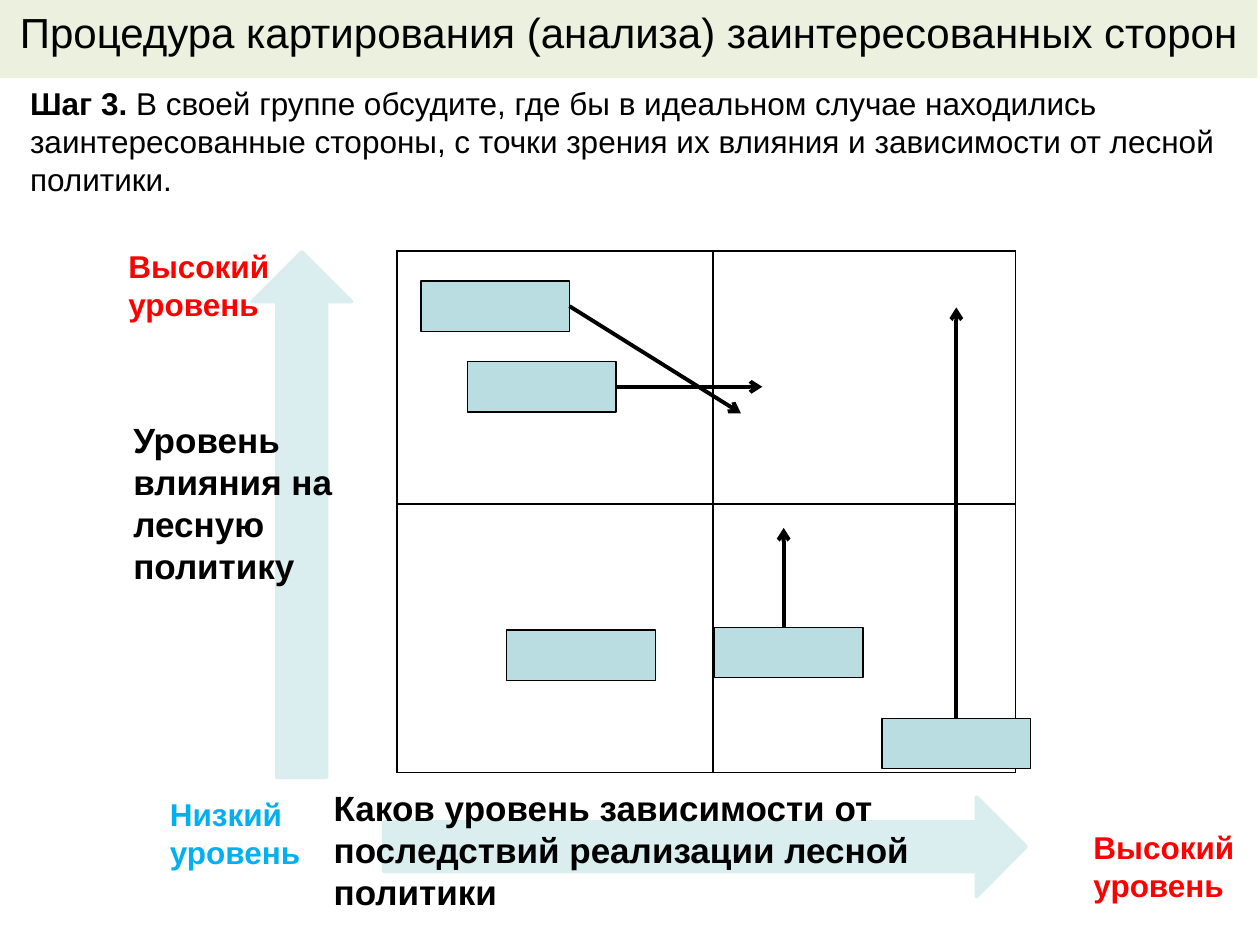
"""Build the stakeholder mapping slide with its influence and dependence grid."""
from typing import NamedTuple, Optional

from lxml.etree import SubElement
from pptx import Presentation
from pptx.dml.color import RGBColor
from pptx.enum.shapes import MSO_CONNECTOR as Connector, MSO_SHAPE as Shape
from pptx.enum.text import MSO_ANCHOR as Anchor, MSO_AUTO_SIZE as AutoSize, PP_ALIGN as Align
from pptx.oxml.ns import qn
from pptx.util import Emu, Pt

PX = 9144
FONT = "Arial"
BLACK = RGBColor(0x00, 0x00, 0x00)
WHITE = RGBColor(0xFF, 0xFF, 0xFF)
RED = RGBColor(0xFF, 0x00, 0x00)
SKY = RGBColor(0x00, 0xB0, 0xF0)
TEAL = RGBColor(0xBA, 0xDD, 0xE1)
PALE_TEAL = RGBColor(0xDA, 0xED, 0xEF)
PALE_GREEN = RGBColor(0xEB, 0xF1, 0xDE)
CARD_WIDTH, CARD_HEIGHT = 118, 40
RIGHT_SIDE, TOP_SIDE = 3, 0


class Box(NamedTuple):
    left: int
    top: int
    width: int
    height: int


class Label(NamedTuple):
    box: Box
    paragraphs: tuple[str, ...]
    size: int
    color: RGBColor


class Move(NamedTuple):
    start: tuple[int, int]
    end: tuple[int, int]
    card: Optional[int] = None
    side: int = TOP_SIDE


CARDS = [(334, 223), (371, 287), (567, 498), (402, 500), (700, 570)]
MOVES = [
    Move((452, 243), (588, 328), 0, RIGHT_SIDE),
    Move((489, 307), (605, 307), 1, RIGHT_SIDE),
    Move((622, 498), (622, 419)),
    Move((759, 570), (759, 244), 4, TOP_SIDE),
]
LEVELS = [
    Label(Box(125, 626, 130, 71), ("Низкий", "уровень"), 18, SKY),
    Label(Box(92, 191, 158, 71), ("Высокий уровень",), 18, RED),
    Label(Box(858, 652, 139, 71), ("Высокий уровень",), 18, RED),
]
INFLUENCE = Label(Box(96, 327, 197, 145), ("Уровень влияния на лесную политику",), 20, BLACK)
DEPENDENCE = Label(
    Box(255, 619, 603, 111),
    ("Каков уровень зависимости от последствий реализации лесной политики",), 20, BLACK)


def px(*lengths: int) -> list[Emu]:
    """Turn px lengths into EMU."""
    return [Emu(length * PX) for length in lengths]


def set_font(paragraph, size: int, color: RGBColor) -> None:
    """Format a whole paragraph."""
    paragraph.font.name = FONT
    paragraph.font.size = Pt(size)
    paragraph.font.color.rgb = color


def add_title(slide, text: str) -> None:
    """Lay the title across the top band."""
    title = slide.shapes.title
    title.left, title.top, title.width, title.height = px(0, 0, 998, 62)
    title.fill.solid()
    title.fill.fore_color.rgb = PALE_GREEN
    frame = title.text_frame
    frame.text = text
    frame.auto_size = AutoSize.NONE
    frame.vertical_anchor = Anchor.TOP
    frame.paragraphs[0].alignment = Align.CENTER
    set_font(frame.paragraphs[0], 24, BLACK)


def add_frame(slide, box: Box):
    """Add a wrapping text box and return its frame."""
    frame = slide.shapes.add_textbox(*px(*box)).text_frame
    frame.word_wrap = True
    frame.auto_size = AutoSize.SHAPE_TO_FIT_TEXT
    return frame


def add_label(slide, label: Label) -> None:
    """Add a bold label."""
    frame = add_frame(slide, label.box)
    frame.text = "\n".join(label.paragraphs)
    for paragraph in frame.paragraphs:
        set_font(paragraph, label.size, label.color)
        paragraph.font.bold = True


def add_step(slide, heading: str, task: str) -> None:
    """Add the task of this step after its bold heading."""
    paragraph = add_frame(slide, Box(14, 62, 969, 101)).paragraphs[0]
    for text, bold in ((heading, True), (task, False)):
        run = paragraph.add_run()
        run.text = text
        run.font.bold = bold
    set_font(paragraph, 18, BLACK)


def add_grid(slide, box: Box, columns: tuple[int, ...], rows: tuple[int, ...]) -> None:
    """Add the empty grid with thin black borders."""
    grid = slide.shapes.add_table(len(rows), len(columns), *px(*box)).table
    grid.first_row = grid.horz_banding = False
    for column, width in zip(grid.columns, px(*columns)):
        column.width = width
    for row, height in zip(grid.rows, px(*rows)):
        row.height = height
    for cell in grid.iter_cells():
        properties = cell._tc.get_or_add_tcPr()
        for edge in ("a:lnL", "a:lnR", "a:lnT", "a:lnB"):
            border = SubElement(properties, qn(edge), w=str(Pt(1)))
            SubElement(SubElement(border, qn("a:solidFill")), qn("a:srgbClr"), val=str(BLACK))
        cell.fill.solid()
        cell.fill.fore_color.rgb = WHITE


def add_figure(slide, kind: Shape, box: Box, fill: RGBColor, line: RGBColor, weight: float):
    """Add a filled and outlined shape."""
    figure = slide.shapes.add_shape(kind, *px(*box))
    figure.shadow.inherit = False
    figure.fill.solid()
    figure.fill.fore_color.rgb = fill
    figure.line.color.rgb = line
    figure.line.width = Pt(weight)
    return figure


def add_move(slide, move: Move, cards: list) -> None:
    """Draw the arrow from a stakeholder to its ideal place."""
    arrow = slide.shapes.add_connector(Connector.STRAIGHT, *px(*move.start, *move.end))
    if move.card is not None:
        arrow.begin_connect(cards[move.card], move.side)
    arrow.line.color.rgb = BLACK
    arrow.line.width = Pt(2.25)
    SubElement(arrow.line._get_or_add_ln(), qn("a:tailEnd"), type="arrow")
    SubElement(arrow._element.spPr, qn("a:effectLst"))


def add_axis(slide, box: Box, label: Label, rotation: int = 0) -> None:
    """Add a broad axis arrow with its label on top."""
    axis = add_figure(slide, Shape.UP_ARROW, box, PALE_TEAL, PALE_TEAL, 2)
    axis.rotation = rotation
    add_label(slide, label)


def main() -> None:
    """Build and save the slide."""
    deck = Presentation()
    deck.slide_width, deck.slide_height = px(1000, 750)
    slide = deck.slides.add_slide(deck.slide_layouts[5])
    add_title(slide, "Процедура картирования (анализа) заинтересованных сторон")
    add_grid(slide, Box(315, 199, 491, 414), (251, 240), (201, 213))
    for level in LEVELS:
        add_label(slide, level)
    add_step(slide, "Шаг 3. ",
             "В своей группе обсудите, где бы в идеальном случае находились "
             "заинтересованные стороны, с точки зрения их влияния и зависимости "
             "от лесной политики.")
    cards = [add_figure(slide, Shape.RECTANGLE, Box(left, top, CARD_WIDTH, CARD_HEIGHT),
                        TEAL, BLACK, 0.75) for left, top in CARDS]
    for move in MOVES:
        add_move(slide, move, cards)
    add_axis(slide, Box(200, 200, 79, 417), INFLUENCE)
    add_axis(slide, Box(520, 417, 79, 510), DEPENDENCE, 90)
    deck.save("out.pptx")


if __name__ == "__main__":
    main()
